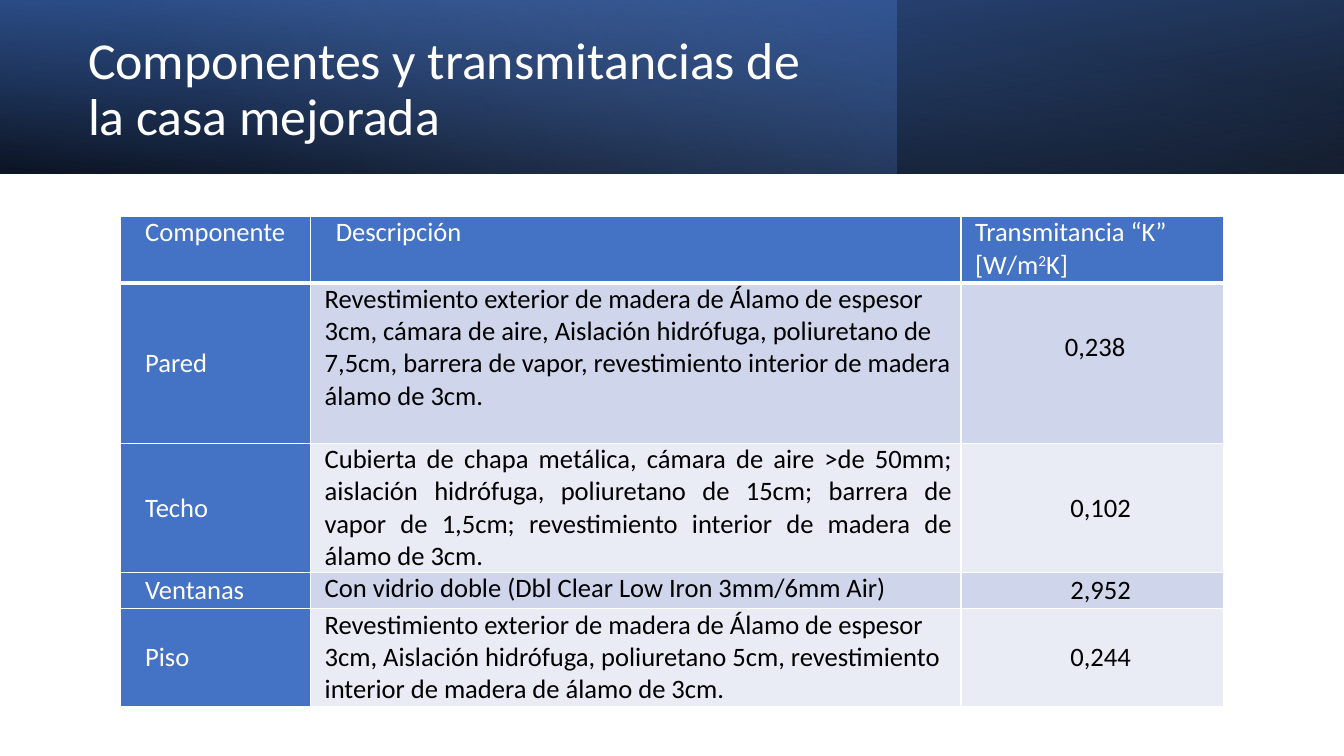
from lxml import etree
from pptx import Presentation
from pptx.dml.color import RGBColor
from pptx.enum.shapes import MSO_SHAPE as SHAPE
from pptx.enum.text import MSO_ANCHOR as ANCHOR, MSO_AUTO_SIZE as AUTOSIZE, PP_ALIGN as ALIGN
from pptx.oxml import parse_xml
from pptx.oxml.ns import nsdecls, qn
from pptx.util import Inches, Pt

W, H = Inches(13.33), Inches(7.5)
WHITE = RGBColor(0xFF, 0xFF, 0xFF)
BLACK = RGBColor(0, 0, 0)
BLUE = RGBColor(0x44, 0x72, 0xC4)
NAVY = RGBColor(0x2F, 0x55, 0x97)
SKY = RGBColor(0x8F, 0xAA, 0xDC)
BANDS = RGBColor(0xCF, 0xD5, 0xEA), RGBColor(0xE9, 0xEB, 0xF5)
FONT = "Calibri"
BANNER_H = 22.93
COLS = 14.18, 48.39, 19.58
ROWS = 8.8, 21.2, 17.07, 4.8, 12.93
HEADER = "Componente", "Descripción", "Transmitancia “K” [W/m^2^K]"
COMPONENTS = [
    ("Pared", "Revestimiento exterior de madera de Álamo de espesor 3cm, cámara de aire, "
     "Aislación hidrófuga, poliuretano de 7,5cm, barrera de vapor, revestimiento interior "
     "de madera álamo de 3cm.", "0,238"),
    ("Techo", "Cubierta de chapa metálica, cámara de aire >de 50mm; aislación hidrófuga, "
     "poliuretano de 15cm; barrera de vapor de 1,5cm; revestimiento interior de madera de "
     "álamo de 3cm.", "0,102"),
    ("Ventanas", "Con vidrio doble (Dbl Clear Low Iron 3mm/6mm Air)", "2,952"),
    ("Piso", "Revestimiento exterior de madera de Álamo de espesor 3cm, Aislación hidrófuga, "
     "poliuretano 5cm, revestimiento interior de madera de álamo de 3cm.", "0,244"),
]


def across(percent):
    """Return a percentage of the slide width."""
    return round(W * percent / 100)


def down(percent):
    """Return a percentage of the slide height."""
    return round(H * percent / 100)


def apply(obj, values):
    """Set every attribute in a dict of format values."""
    for name, value in values.items():
        setattr(obj, name, value)


def add_band(s, width, stops, angle, flip=False, rotation=0):
    """Add a banner rectangle filled with a translucent gradient."""
    sp = s.shapes.add_shape(SHAPE.RECTANGLE, 0, 0, across(width), down(BANNER_H))
    sp.shadow.inherit = False
    sp.line.fill.background()
    sp.rotation = rotation
    spPr = sp._element.spPr
    if flip:
        spPr.find(qn("a:xfrm")).set("flipH", "1")
    marks = "".join(
        f'<a:gs pos="{pos * 1000}"><a:srgbClr val="{color}">'
        f'<a:alpha val="{alpha * 1000}"/></a:srgbClr></a:gs>'
        for pos, color, alpha in stops)
    spPr.find(qn("a:prstGeom")).addnext(parse_xml(
        f'<a:gradFill {nsdecls("a")} rotWithShape="1"><a:gsLst>{marks}</a:gsLst>'
        f'<a:lin ang="{angle * 60000}" scaled="0"/></a:gradFill>'))


def add_title(s, text):
    """Place the title placeholder over the banner."""
    title = s.shapes.title
    s.shapes._spTree.append(title._element)
    apply(title, dict(left=across(5.8), top=down(3.6), width=across(57.9), height=down(16.9)))
    tf = title.text_frame
    apply(tf, dict(text=text, word_wrap=True, auto_size=AUTOSIZE.NONE,
                   vertical_anchor=ANCHOR.MIDDLE))
    p = tf.paragraphs[0]
    apply(p, dict(alignment=ALIGN.LEFT, line_spacing=0.9))
    apply(p.runs[0].font, dict(name=FONT, size=Pt(37)))
    p.runs[0].font.color.rgb = WHITE


def set_borders(cell, bottom):
    """Draw white borders round a cell, with a given bottom width."""
    tcPr = cell._tc.get_or_add_tcPr()
    for i, (side, width) in enumerate(dict(L=1, R=1, T=1, B=bottom).items()):
        ln = etree.Element(qn(f"a:ln{side}"), w=str(Pt(width)))
        fill = etree.SubElement(ln, qn("a:solidFill"))
        etree.SubElement(fill, qn("a:srgbClr"), val=str(WHITE))
        tcPr.insert(i, ln)


def fill_cell(cell, text, fill, color, indent, align=ALIGN.LEFT, anchor=ANCHOR.MIDDLE,
              bottom=1, below=0):
    """Write and format a cell; carets enclose superscript text."""
    apply(cell, dict(margin_left=Inches(0.09), margin_right=Inches(0.09), margin_top=0,
                     margin_bottom=Inches(below), vertical_anchor=anchor))
    cell.fill.solid()
    cell.fill.fore_color.rgb = fill
    set_borders(cell, bottom)
    p = cell.text_frame.paragraphs[0]
    p.alignment = align
    apply_indent = p._p.get_or_add_pPr().set
    apply_indent("marL", str(Inches(indent)))
    for i, part in enumerate(text.split("^")):
        r = p.add_run()
        r.text = part
        apply(r.font, dict(name=FONT, size=Pt(19)))
        r.font.color.rgb = color
        if i % 2:
            r._r.get_or_add_rPr().set("baseline", "30000")


def add_components(s):
    """Add the table of components and transmittances."""
    table = s.shapes.add_table(len(ROWS), len(COLS), across(8.93), down(28.67),
                               across(sum(COLS)), down(sum(ROWS))).table
    apply(table, dict(first_row=False, horz_banding=False))
    for col, share in zip(table.columns, COLS):
        col.width = across(share)
    for row, share in zip(table.rows, ROWS):
        row.height = down(share)
    for j, (text, indent) in enumerate(zip(HEADER, (0.16, 0.16, 0.05))):
        fill_cell(table.cell(0, j), text, BLUE, WHITE, indent, anchor=ANCHOR.TOP, bottom=3)
    for i, (name, description, value) in enumerate(COMPONENTS, 1):
        band = BANDS[(i - 1) % 2]
        fill_cell(table.cell(i, 0), name, BLUE, WHITE, 0.16)
        fill_cell(table.cell(i, 1), description, band, BLACK, 0.05, anchor=ANCHOR.TOP,
                  align=ALIGN.JUSTIFY if name == "Techo" else ALIGN.LEFT)
        raised = name == "Pared"
        fill_cell(table.cell(i, 2), value, band, BLACK, 0.05 if raised else 0.16,
                  align=ALIGN.CENTER, below=0.32 if raised else 0)


def main():
    """Build the slide and save it."""
    prs = Presentation()
    apply(prs, dict(slide_width=W, slide_height=H))
    s = prs.slides.add_slide(prs.slide_layouts[5])
    add_band(s, 100, [(0, BLACK, 96), (100, NAVY, 100)], 100, flip=True, rotation=180)
    add_band(s, 66.7, [(0, BLUE, 41), (74, SKY, 0)], 140)
    add_band(s, 100, [(0, BLACK, 63), (78, BLUE, 15)], 260, flip=True)
    add_title(s, "Componentes y transmitancias de la casa mejorada")
    add_components(s)
    prs.save("out.pptx")


if __name__ == "__main__":
    main()
